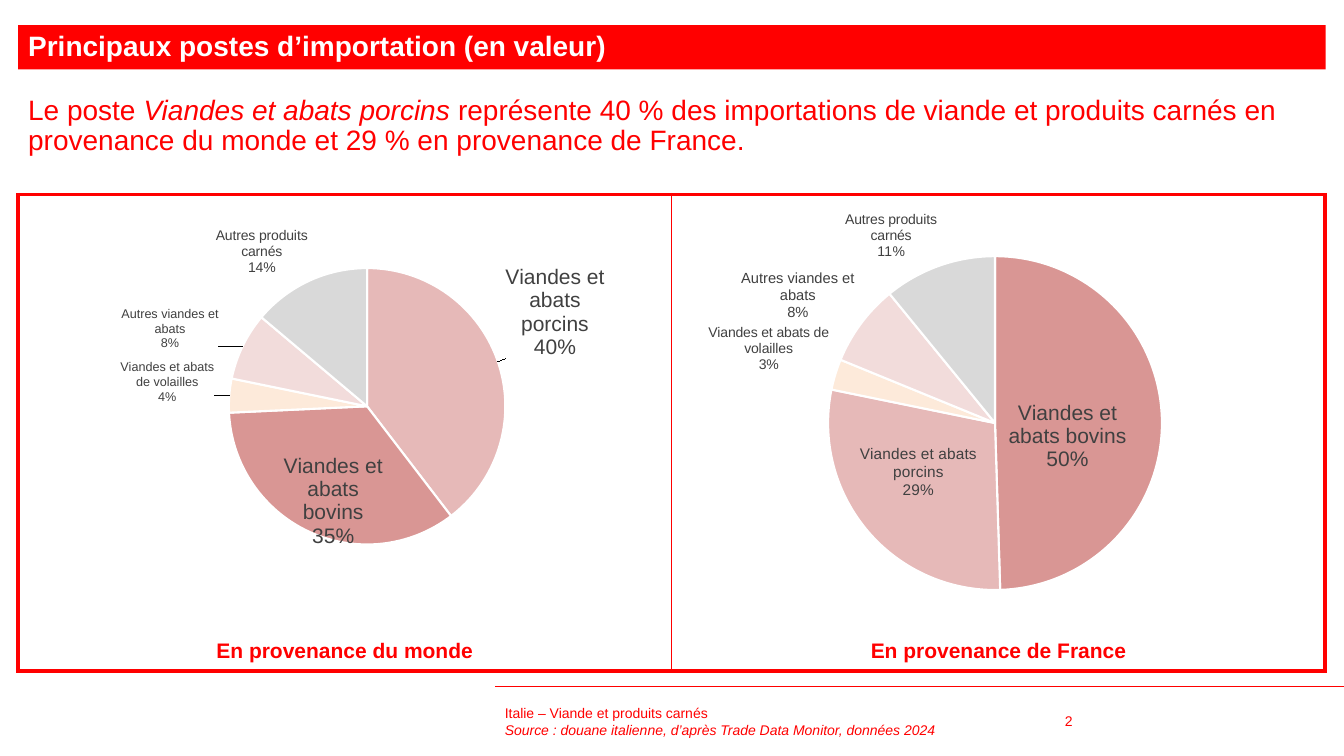
from math import cos, pi, sin

from lxml import etree
from pptx import Presentation
from pptx.chart.data import CategoryChartData
from pptx.dml.color import RGBColor
from pptx.enum.chart import XL_CHART_TYPE as CHART, XL_LABEL_POSITION as LABEL
from pptx.enum.shapes import MSO_CONNECTOR as LINE, MSO_SHAPE as SHAPE
from pptx.enum.text import MSO_ANCHOR as ANCHOR, PP_ALIGN as ALIGN
from pptx.oxml import parse_xml
from pptx.oxml.ns import nsdecls, qn
from pptx.util import Pt

RED = RGBColor(0xFF, 0x00, 0x00)
WHITE = RGBColor(0xFF, 0xFF, 0xFF)
BLACK = RGBColor(0x00, 0x00, 0x00)
DARK = RGBColor(0x40, 0x40, 0x40)
PORK = RGBColor(0xE6, 0xB9, 0xB8)
BEEF = RGBColor(0xD9, 0x96, 0x94)
POULTRY = RGBColor(0xFD, 0xEA, 0xDA)
OTHER_MEAT = RGBColor(0xF2, 0xDC, 0xDB)
OTHER_PRODUCTS = RGBColor(0xD9, 0xD9, 0xD9)

PORCINS = "Viandes et abats porcins"
BOVINS = "Viandes et abats bovins"
VOLAILLES = "Viandes et abats de volailles"
AUTRES_VIANDES = "Autres viandes et abats"
AUTRES_PRODUITS = "Autres produits carnés"


class SlideBuilder:
    font = "Arial"

    def __init__(self, slide):
        self.shapes = slide.shapes

    def fill_frame(self, tf, paragraphs, size, color=RED, bold=False,
                   align=ALIGN.LEFT, anchor=ANCHOR.TOP, spacing=None):
        """Fill a text frame; each paragraph is a list of (text, italic) runs."""
        tf.word_wrap = True
        tf.vertical_anchor = anchor
        for i, runs in enumerate(paragraphs):
            p = tf.add_paragraph() if i else tf.paragraphs[0]
            p.alignment = align
            p.line_spacing = spacing
            f = p.font
            f.name, f.size, f.bold, f.color.rgb = self.font, Pt(size), bold, color
            for text, italic in runs:
                r = p.add_run()
                r.text = text
                if italic:
                    r.font.italic = True

    def text(self, box, paragraphs, size, **style):
        sp = self.shapes.add_textbox(*map(Pt, box))
        self.fill_frame(sp.text_frame, paragraphs, size, **style)

    def banner(self, box, text, size):
        sp = self.shapes.add_shape(SHAPE.RECTANGLE, *map(Pt, box))
        sp.shadow.inherit = False
        sp.fill.solid()
        sp.fill.fore_color.rgb = RED
        sp.line.fill.background()
        self.fill_frame(sp.text_frame, [[(text, False)]], size, color=WHITE,
                        bold=True, anchor=ANCHOR.MIDDLE, spacing=0.9)

    def rule(self, x1, y1, x2, y2, width):
        ln = self.shapes.add_connector(LINE.STRAIGHT, *map(Pt, (x1, y1, x2, y2)))
        ln.line.color.rgb = RED
        ln.line.width = Pt(width)
        etree.SubElement(ln._element.spPr, qn("a:effectLst"))

    def frame(self, box, cols):
        """One-row table with thick outer borders and thin dividers."""
        table = self.shapes.add_table(1, cols, *map(Pt, box)).table
        table.first_row = table.horz_banding = False
        for i, cell in enumerate(table.rows[0].cells):
            widths = {"L": 1 if i else 3, "R": 3 if i == cols - 1 else 1,
                      "T": 3, "B": 3}
            tc_pr = cell._tc.get_or_add_tcPr()
            for side, width in widths.items():
                tc_pr.append(parse_xml(
                    f'<a:ln{side} {nsdecls("a")} w="{Pt(width)}"><a:solidFill>'
                    f'<a:srgbClr val="{RED}"/></a:solidFill></a:ln{side}>'))
            cell.fill.background()

    def manual_layout(self, **values):
        items = "".join(f'<c:{k} val="{v}"/>' for k, v in values.items())
        return parse_xml(f'<c:layout {nsdecls("c")}><c:manualLayout>{items}'
                         '</c:manualLayout></c:layout>')

    def pie(self, box, circle, slices):
        """circle: left, top, diameter; slices: name, value, colour, label size, label centre."""
        left, top, width, height = box
        cx, cy, d = circle
        data = CategoryChartData(number_format="0%")
        data.categories = [s[0] for s in slices]
        data.add_series("Series 1", [s[1] for s in slices])
        chart = self.shapes.add_chart(CHART.PIE, *map(Pt, box), data).chart
        chart.has_legend = chart.has_title = False
        chart.font.name, chart.font.size = self.font, Pt(8)
        chart.font.color.rgb = BLACK
        plot_area = chart._chartSpace.chart.plotArea
        for old in plot_area.findall(qn("c:layout")):
            plot_area.remove(old)
        plot_area.insert(0, self.manual_layout(
            layoutTarget="inner", xMode="edge", yMode="edge",
            x=round((cx - left) / width, 4), y=round((cy - top) / height, 4),
            w=round(d / width, 4), h=round(d / height, 4)))
        plot = chart.plots[0]
        plot.vary_by_categories = True
        series = plot.series[0]
        labels = series.data_labels
        labels.show_value = labels.show_category_name = True
        labels.number_format, labels.number_format_is_linked = "0%", False
        labels.font.name, labels.font.size = self.font, Pt(8)
        labels.font.color.rgb = DARK

        total = sum(s[1] for s in slices)
        start = 0
        for i, (_, value, color, size, (x, y)) in enumerate(slices):
            point = series.points[i]
            point.format.fill.solid()
            point.format.fill.fore_color.rgb = color
            point.format.line.color.rgb = WHITE
            point.format.line.width = Pt(1.5)
            label = point.data_label
            label.font.name, label.font.size = self.font, Pt(size)
            label.font.color.rgb = DARK
            label.position = LABEL.CENTER
            angle = 2 * pi * (start + value / 2) / total
            start += value
            dx = x - (cx + d / 2 + d / 4 * sin(angle))
            dy = y - (cy + d / 2 - d / 4 * cos(angle))
            d_lbl = series._element.findall(".//" + qn("c:dLbl"))[i]
            d_lbl.insert(1, self.manual_layout(x=round(dx / width, 4),
                                               y=round(dy / height, 4)))
            d_lbl.find(qn("c:showCatName")).set("val", "1")
            etree.SubElement(d_lbl, qn("c:separator")).text = "\n"


def main():
    prs = Presentation()
    prs.slide_width, prs.slide_height = Pt(960), Pt(540)
    s = SlideBuilder(prs.slides.add_slide(prs.slide_layouts[6]))

    s.rule(960, 490.5, 353.5, 490.5, 0.5)
    s.frame((13, 139, 933.5, 340.5), 2)
    for x, origin in ((13, "du monde"), (480, "de France")):
        s.text((x, 451.5, 466.5, 25), [[(f"En provenance {origin}", False)]], 15,
               bold=True, align=ALIGN.CENTER)
    s.text((353.5, 500.5, 391, 29), [
        [("Italie – Viande et produits carnés", False)],
        [("Source : douane italienne, d’après Trade Data Monitor, données 2024", True)],
    ], 10, anchor=ANCHOR.MIDDLE)
    s.text((753.5, 500.5, 71.5, 29), [[("2", False)]], 10, anchor=ANCHOR.MIDDLE)
    s.banner((13, 18, 934, 31.5), "Principaux postes d’importation (en valeur)", 20)
    s.text((13, 65, 933.5, 58.5), [[
        ("Le poste ", False),
        ("Viandes et abats porcins ", True),
        ("représente 40 % des importations de viande et produits carnés en "
         "provenance du monde et 29 % en provenance de France.", False),
    ]], 20, spacing=0.9)

    s.pie((13, 139, 466, 309.5), (163.5, 191.5, 197.5), [
        (PORCINS, 0.40, PORK, 15, (396.5, 223)),
        (BOVINS, 0.35, BEEF, 15, (238, 358)),
        (VOLAILLES, 0.04, POULTRY, 9, (119.5, 273)),
        (AUTRES_VIANDES, 0.08, OTHER_MEAT, 9, (121.5, 235)),
        (AUTRES_PRODUITS, 0.14, OTHER_PRODUCTS, 10, (187, 180)),
    ])
    s.pie((479, 139, 468, 309.5), (591.5, 183, 238.5), [
        (BOVINS, 0.50, BEEF, 15, (762.5, 311.5)),
        (PORCINS, 0.29, PORK, 11, (656, 337)),
        (VOLAILLES, 0.03, POULTRY, 10, (549, 249)),
        (AUTRES_VIANDES, 0.08, OTHER_MEAT, 10.5, (570, 211)),
        (AUTRES_PRODUITS, 0.11, OTHER_PRODUCTS, 10, (636.5, 168.5)),
    ])
    prs.save("out.pptx")


if __name__ == "__main__":
    main()
